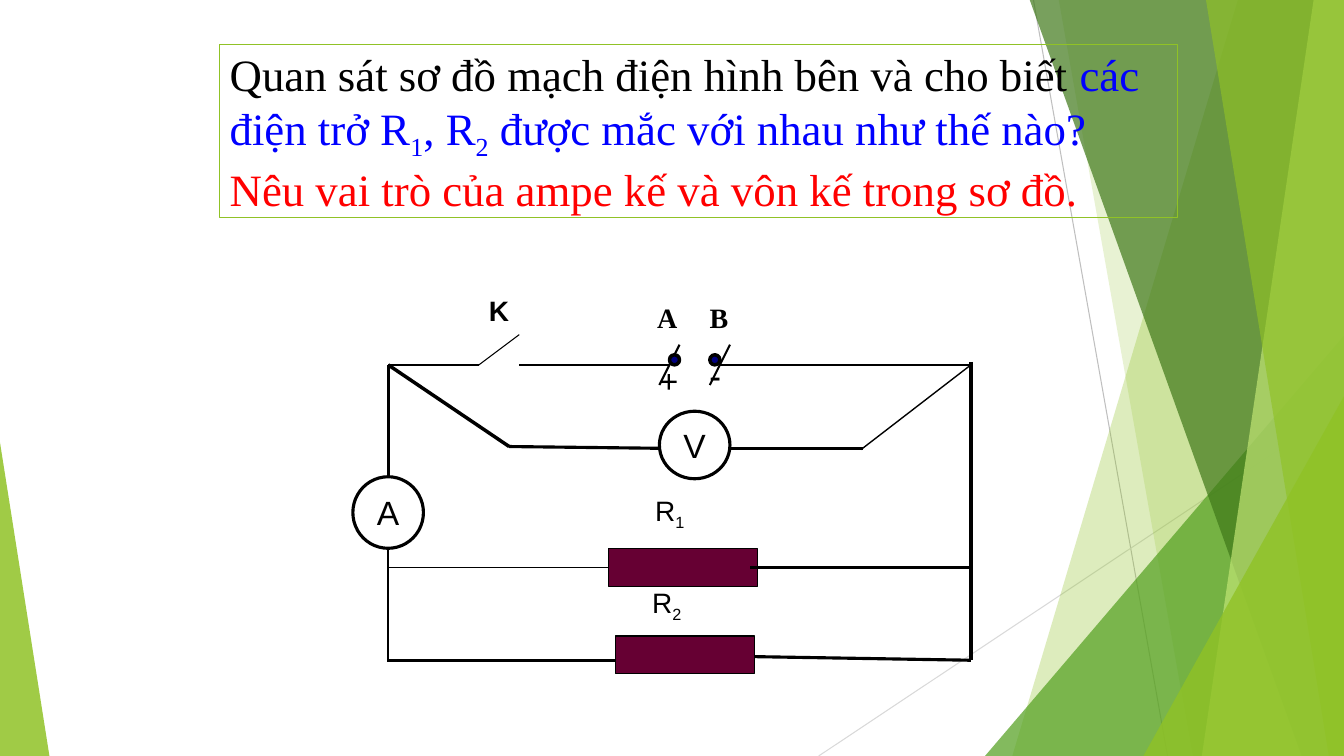
from dataclasses import dataclass
from pptx import Presentation
from pptx.dml.color import RGBColor
from pptx.enum.shapes import MSO_CONNECTOR, MSO_SHAPE
from pptx.enum.text import MSO_ANCHOR, PP_ALIGN
from pptx.oxml.ns import qn
from pptx.util import Pt
from lxml.etree import SubElement

PX = 9144  # 100 px to the inch
WIDE, HIGH = 1333, 750

BLACK = RGBColor(0, 0, 0)
WHITE = RGBColor(255, 255, 255)
BLUE = RGBColor(0, 0, 255)
RED = RGBColor(255, 0, 0)
NAVY = RGBColor(0, 0, 128)
PLUM = RGBColor(0x66, 0, 0x33)
LIME = RGBColor(0x90, 0xC2, 0x26)
LEAF = RGBColor(0x54, 0xA0, 0x21)
MOSS = RGBColor(0x3F, 0x78, 0x19)
PALE = RGBColor(0xC0, 0xE4, 0x74)
GREY = RGBColor(0xBF, 0xBF, 0xBF)
MIST = RGBColor(0xD9, 0xD9, 0xD9)
SANS, SERIF = "Arial", "Times New Roman"


@dataclass
class Band:
    """Green band from a slanted left edge to the right side."""
    top: int
    foot: int
    color: RGBColor
    alpha: int


@dataclass
class Wedge:
    box: tuple[int, int, int, int]
    tip: float
    color: RGBColor
    alpha: int


@dataclass
class Wire:
    start: tuple[int, int]
    end: tuple[int, int]
    width: float
    color: RGBColor = BLACK


@dataclass
class Part:
    kind: MSO_SHAPE
    box: tuple[int, int, int, int]
    fill: RGBColor
    width: float
    name: str = ""


@dataclass
class Label:
    box: tuple[int, int, int, int]
    text: str
    style: dict
    sub: str = ""


BANDS = [Band(1228, 1004, LIME, 30), Band(1050, 1183, LIME, 20)]
FRONT = [Band(1021, 1291, MOSS, 70), Band(1303, 1192, PALE, 70),
         Band(1196, 1318, LIME, 65)]
SLOPE = Wedge((977, 333, 356, 417), 1, LEAF, 72)
ENDS = [Wedge((1134, 393, 199, 357), 1, LIME, 80),
        Wedge((0, 439, 49, 311), 0, LIME, 85)]
RAYS = [Wire((1025, 0), (1158, 750), 0.75, GREY),
        Wire((1333, 403), (812, 750), 0.75, MIST)]

LEFT, RIGHT, TOP, BASE, MID = 385, 963, 362, 655, 563
R1 = Part(MSO_SHAPE.RECTANGLE, (604, 544, 147, 38), PLUM, 0.75)
WIRES = [
    Wire((724, 342), (704, 382), 1.5),
    Wire((674, 342), (654, 382), 1.5),
    # voltmeter branch
    Wire((722, 445), (856, 445), 2.25),
    Wire((677, 445), (505, 443), 2.25),
    Wire((505, 443), (LEFT, TOP), 2.5),
    Wire((RIGHT, TOP), (854, 446), 1),
    # outer loop
    Wire((RIGHT, 359), (RIGHT, BASE), 2.25),
    Wire((LEFT, TOP), (LEFT, 473), 2.25),
    Wire((LEFT, 544), (LEFT, 657), 1),
    Wire((LEFT, BASE), (614, BASE), 2.25),
    Wire((722, 651), (RIGHT, BASE), 2.25),
    Wire((744, MID), (RIGHT, MID), 1.5),
    # switch and source
    Wire((LEFT, TOP), (475, TOP), 1),
    Wire((475, TOP), (515, 332), 0.75),
    Wire((515, TOP), (664, TOP), 1),
    Wire((714, TOP), (RIGHT, TOP), 1),
]
PARTS = [
    Part(MSO_SHAPE.OVAL, (350, 473, 70, 71), WHITE, 2.25, "A"),
    Part(MSO_SHAPE.OVAL, (654, 408, 70, 67), WHITE, 2.25, "V"),
    Part(MSO_SHAPE.RECTANGLE, (610, 631, 138, 37), PLUM, 0.75),
    Part(MSO_SHAPE.OVAL, (664, 352, 10, 10), NAVY, 2.5),
    Part(MSO_SHAPE.OVAL, (704, 352, 10, 10), NAVY, 2.5),
]

PLAIN = {"name": SANS, "size": Pt(20)}
KEY = {"name": SANS, "size": Pt(20), "bold": True}
POLE = {"name": SERIF, "size": Pt(20), "bold": True}
SIGN = {"name": SERIF, "size": Pt(24), "bold": True}
METER = {"name": SANS, "size": Pt(24)}
TITLE = {"name": SERIF, "size": Pt(32)}
LABELS = [
    Label((475, 286, 116, 44), "K", KEY),
    Label((642, 293, 41, 44), "A", POLE),
    Label((694, 293, 50, 44), "B", POLE),
    Label((644, 352, 41, 50), "+", SIGN),
    Label((694, 346, 31, 50), "-", SIGN),
    Label((640, 485, 71, 44), "R", PLAIN, "1"),
    Label((637, 576, 93, 44), "R", PLAIN, "2"),
]
ASK = [
    ("Quan sát sơ đồ mạch điện hình bên và cho biết ", BLACK, False),
    ("các điện trở R", BLUE, False), ("1", BLUE, True),
    (", R", BLUE, False), ("2", BLUE, True),
    (" được mắc với nhau như thế nào? ", BLUE, False),
    ("Nêu vai trò của ampe kế và vôn kế trong sơ đồ.", RED, False),
]


def scale(box: tuple) -> list[int]:
    return [n * PX for n in box]


def paint(shape, color: RGBColor, alpha: int) -> None:
    shape.shadow.inherit = False
    shape.fill.solid()
    shape.fill.fore_color.rgb = color
    tint = shape.fill._xPr.find(qn("a:solidFill"))[0]
    SubElement(tint, qn("a:alpha")).set("val", str(alpha * 1000))
    shape.line.fill.background()


def add_band(shapes, band: Band) -> None:
    pen = shapes.build_freeform(band.top, -1, scale=PX)
    pen.add_line_segments([(WIDE, -1), (WIDE, HIGH), (band.foot, HIGH)])
    paint(pen.convert_to_shape(), band.color, band.alpha)


def add_wedge(shapes, wedge: Wedge) -> None:
    shape = shapes.add_shape(MSO_SHAPE.ISOSCELES_TRIANGLE, *scale(wedge.box))
    shape.adjustments[0] = wedge.tip
    paint(shape, wedge.color, wedge.alpha)


def add_wire(shapes, wire: Wire):
    line = shapes.add_connector(MSO_CONNECTOR.STRAIGHT,
                                *scale(wire.start + wire.end))
    line.line.color.rgb = wire.color
    line.line.width = Pt(wire.width)
    SubElement(line._element.spPr, qn("a:effectLst"))
    return line


def add_run(para, text: str, style: dict, color: RGBColor = BLACK,
            low: bool = False) -> None:
    run = para.add_run()
    run.text = text
    for key, value in style.items():
        setattr(run.font, key, value)
    run.font.color.rgb = color
    if low:
        run.font._element.set("baseline", "-25000")


def add_part(shapes, part: Part):
    shape = shapes.add_shape(part.kind, *scale(part.box))
    shape.shadow.inherit = False
    shape.fill.solid()
    shape.fill.fore_color.rgb = part.fill
    shape.line.color.rgb = BLACK
    shape.line.width = Pt(part.width)
    if part.name:
        frame = shape.text_frame
        frame.word_wrap = False
        frame.vertical_anchor = MSO_ANCHOR.MIDDLE
        frame.paragraphs[0].alignment = PP_ALIGN.CENTER
        add_run(frame.paragraphs[0], part.name, METER)
    return shape


def add_label(shapes, label: Label) -> None:
    frame = shapes.add_textbox(*scale(label.box)).text_frame
    frame.word_wrap = True
    add_run(frame.paragraphs[0], label.text, label.style)
    if label.sub:
        add_run(frame.paragraphs[0], label.sub, label.style, low=True)


def add_title(shapes) -> None:
    box = shapes.add_shape(MSO_SHAPE.RECTANGLE, *scale((218, 44, 950, 172)))
    box.shadow.inherit = False
    box.fill.background()
    box.line.color.rgb = LIME
    box.line.width = Pt(0.75)
    frame = box.text_frame
    frame.word_wrap = True
    frame.vertical_anchor = MSO_ANCHOR.MIDDLE
    frame.paragraphs[0].alignment = PP_ALIGN.LEFT
    for text, color, low in ASK:
        add_run(frame.paragraphs[0], text, TITLE, color, low)


def main() -> None:
    deck = Presentation()
    deck.slide_width, deck.slide_height = scale((WIDE, HIGH))
    shapes = deck.slides.add_slide(deck.slide_layouts[6]).shapes
    # Green backdrop
    for ray in RAYS:
        add_wire(shapes, ray)
    for band in BANDS:
        add_band(shapes, band)
    add_wedge(shapes, SLOPE)
    for band in FRONT:
        add_band(shapes, band)
    for wedge in ENDS:
        add_wedge(shapes, wedge)
    # Question
    add_title(shapes)
    # Circuit
    first = add_part(shapes, R1)
    for wire in WIRES:
        add_wire(shapes, wire)
    lead = add_wire(shapes, Wire((604, MID), (LEFT, MID), 0.75))
    lead.begin_connect(first, 1)
    for part in PARTS:
        add_part(shapes, part)
    for label in LABELS:
        add_label(shapes, label)
    deck.save("out.pptx")


if __name__ == "__main__":
    main()
